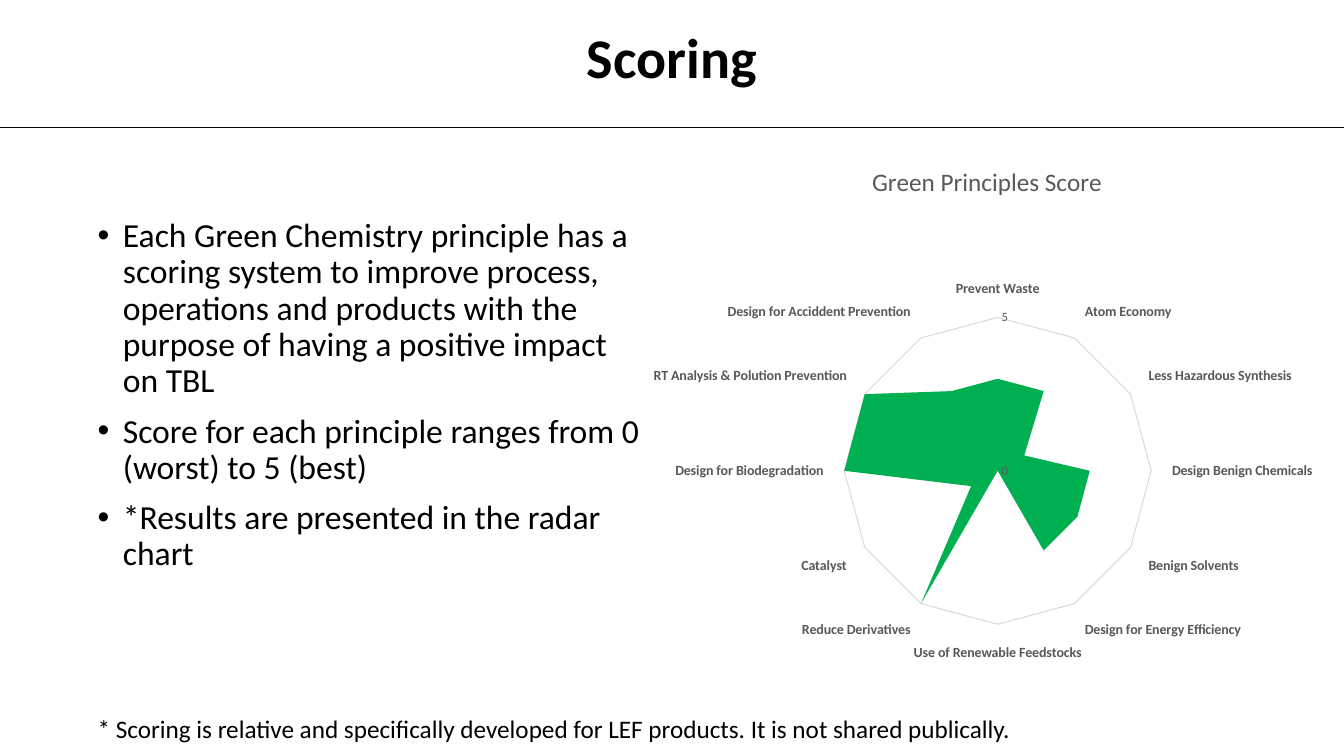
"""Build a slide that explains scoring with a radar chart."""
from dataclasses import dataclass

from lxml import etree
from pptx import Presentation
from pptx.chart.data import CategoryChartData
from pptx.dml.color import RGBColor
from pptx.enum.chart import XL_CHART_TYPE, XL_TICK_MARK
from pptx.enum.shapes import MSO_CONNECTOR
from pptx.enum.text import MSO_AUTO_SIZE, PP_ALIGN
from pptx.oxml.ns import qn
from pptx.slide import Slide
from pptx.util import Inches, Pt

RADAR = XL_CHART_TYPE.RADAR_FILLED
NO_TICK = XL_TICK_MARK.NONE
LINE = MSO_CONNECTOR.STRAIGHT
FIT, FIXED = MSO_AUTO_SIZE.SHAPE_TO_FIT_TEXT, MSO_AUTO_SIZE.NONE
LEFT, CENTER = PP_ALIGN.LEFT, PP_ALIGN.CENTER

WIDE, HIGH = Inches(13.33), Inches(7.5)
COL, ROW = WIDE / 100, HIGH / 100
FACE = "Calibri"
HUES = {"ink": "000000", "gray": "595959", "grid": "D9D9D9", "green": "00B050"}
EDGE = 6.53


@dataclass
class Box:
    """Place on a grid of 100 columns by 100 rows."""
    x: float
    y: float
    w: float
    h: float

    def emu(self) -> tuple[int, ...]:
        """Give left, top, width and height in slide units."""
        return (round(self.x * COL), round(self.y * ROW),
                round(self.w * COL), round(self.h * ROW))


@dataclass
class Block:
    """Text with its place and look."""
    box: Box
    lines: list[str]
    size: int
    bold: bool = False
    align: PP_ALIGN = LEFT
    list: bool = False


BLOCKS = [
    Block(Box(EDGE, 28.27, 42.08, 63.47), [
        "Each Green Chemistry principle has a scoring system to improve process, "
        "operations and products with the purpose of having a positive impact on TBL",
        "Score for each principle ranges from 0 (worst) to 5 (best)",
        "*Results are presented in the radar chart",
    ], 24, list=True),
    Block(Box(EDGE, 93.73, 69.53, 5.33), [
        "* Scoring is relative and specifically developed for LEF products. "
        "It is not shared publically.",
    ], 18),
    Block(Box(42.83, 2.27, 14.33, 10.27), ["Scoring"], 40, True, CENTER),
]
SCORES = {
    "Prevent Waste": 3,
    "Atom Economy": 3,
    "Less Hazardous Synthesis": 1,
    "Design Benign Chemicals": 3,
    "Benign Solvents": 3,
    "Design for Energy Efficiency": 3,
    "Use of Renewable Feedstocks": 0,
    "Reduce Derivatives": 5,
    "Catalyst": 1,
    "Design for Biodegradation": 5,
    "RT Analysis & Polution Prevention": 5,
    "Design for Acciddent Prevention": 3,
}
CHART = Box(46.88, 18.93, 53.12, 78.13)
PLOT = {"x": 0.3, "y": 0.29, "w": 0.43, "h": 0.53}


def hue(name: str) -> RGBColor:
    """Look up a colour."""
    return RGBColor.from_string(HUES[name])


def style(font, size: int, name: str, bold: bool = False) -> None:
    """Set face, size, colour and weight."""
    font.name, font.size, font.bold = FACE, Pt(size), bold
    font.color.rgb = hue(name)


def stroke(line, name: str, width: float) -> None:
    """Set the colour and width of a line."""
    line.color.rgb, line.width = hue(name), Pt(width)


def bullet(para) -> None:
    """Give a paragraph a bullet, hanging indent and spacing."""
    para.line_spacing, para.space_before = 0.9, Pt(10)
    props = para._p.get_or_add_pPr()
    props.set("marL", str(Inches(0.25)))
    props.set("indent", str(-Inches(0.25)))
    etree.SubElement(props, qn("a:buFont")).set("typeface", "Arial")
    etree.SubElement(props, qn("a:buChar")).set("char", "•")


def write(slide: Slide, block: Block) -> None:
    """Add a text block run by run."""
    frame = slide.shapes.add_textbox(*block.box.emu()).text_frame
    frame.word_wrap = block.list
    frame.auto_size = FIXED if block.list else FIT
    for i, text in enumerate(block.lines):
        para = frame.add_paragraph() if i else frame.paragraphs[0]
        para.alignment = block.align
        if block.list:
            bullet(para)
        run = para.add_run()
        run.text = text
        style(run.font, block.size, "ink", block.bold)


def place(chart) -> None:
    """Fix the inner plot area as shares of the chart."""
    area = chart._chartSpace.find(".//" + qn("c:plotArea"))
    for old in area.findall(qn("c:layout")):
        area.remove(old)
    layout = etree.Element(qn("c:layout"))
    area.insert(0, layout)
    manual = etree.SubElement(layout, qn("c:manualLayout"))
    rules = {"layoutTarget": "inner", "xMode": "edge", "yMode": "edge", **PLOT}
    for tag, val in rules.items():
        etree.SubElement(manual, qn(f"c:{tag}")).set("val", str(val))


def plot(slide: Slide) -> None:
    """Add the filled radar chart."""
    data = CategoryChartData()
    data.categories = list(SCORES)
    data.add_series("Series 1", list(SCORES.values()))
    chart = slide.shapes.add_chart(RADAR, *CHART.emu(), data).chart
    style(chart.font, 10, "ink")
    chart.has_legend = False
    chart.has_title = True
    run = chart.chart_title.text_frame.paragraphs[0].add_run()
    run.text = "Green Principles Score"
    style(run.font, 18, "gray")
    chart.chart_title.include_in_layout = False

    cats, vals = chart.category_axis, chart.value_axis
    for axis, size, bold in ((cats, 10, True), (vals, 9, False)):
        axis.major_tick_mark = axis.minor_tick_mark = NO_TICK
        axis.has_major_gridlines = True
        stroke(axis.major_gridlines.format.line, "grid", 0.75)
        style(axis.tick_labels.font, size, "gray", bold)
        axis.tick_labels.number_format = "General"
        axis.tick_labels.number_format_is_linked = False
    stroke(cats.format.line, "grid", 0.75)
    vals.format.line.fill.background()
    vals.minimum_scale, vals.maximum_scale, vals.major_unit = 0, 5, 5

    radar = chart.plots[0]
    radar.vary_by_categories = False
    look = radar.series[0].format
    look.fill.solid()
    look.fill.fore_color.rgb = hue("green")
    look.line.fill.background()
    place(chart)


def rule(slide: Slide) -> None:
    """Draw the line below the heading."""
    y = round(16.8 * ROW)
    line = slide.shapes.add_connector(LINE, 0, y, WIDE, y)
    stroke(line.line, "ink", 0.5)
    etree.SubElement(line._element.spPr, qn("a:effectLst"))


def main() -> None:
    """Build and save the slide."""
    deck = Presentation()
    deck.slide_width, deck.slide_height = WIDE, HIGH
    slide = deck.slides.add_slide(deck.slide_layouts[6])
    plot(slide)
    rule(slide)
    for block in BLOCKS:
        write(slide, block)
    deck.save("out.pptx")


if __name__ == "__main__":
    main()
